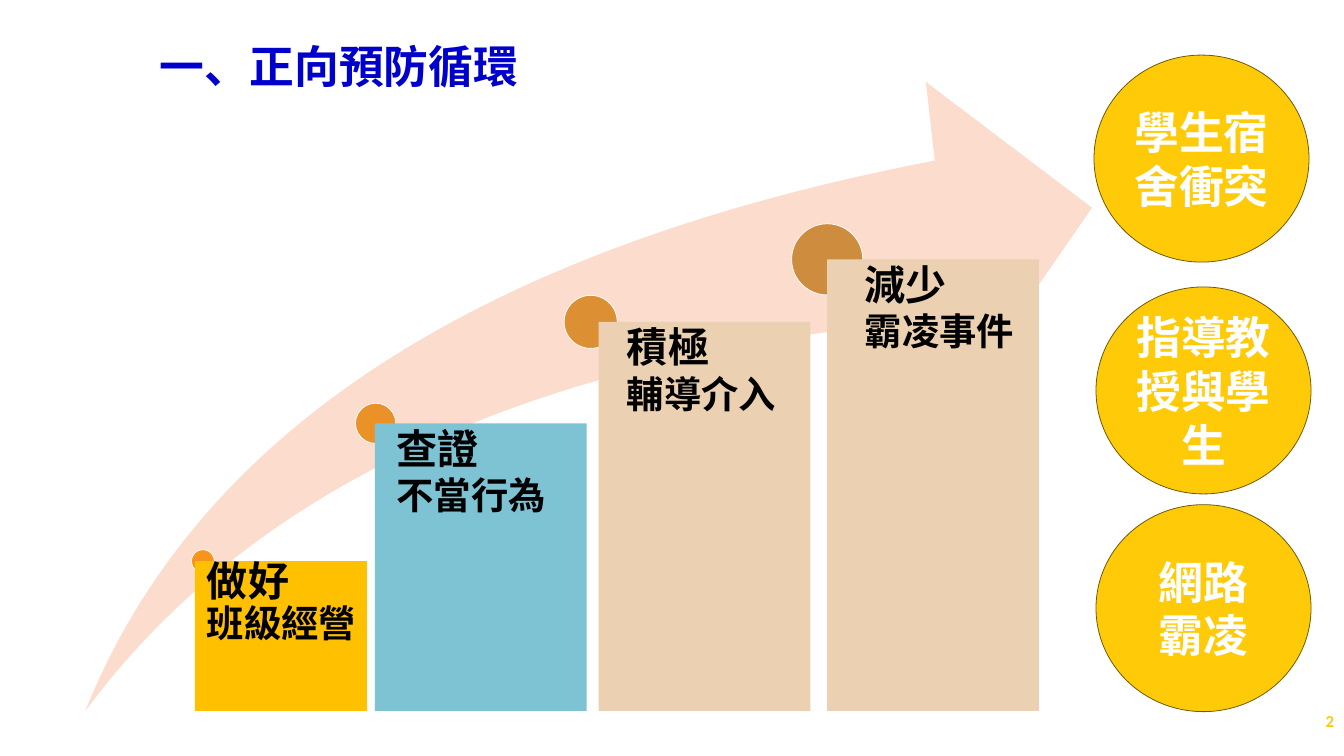
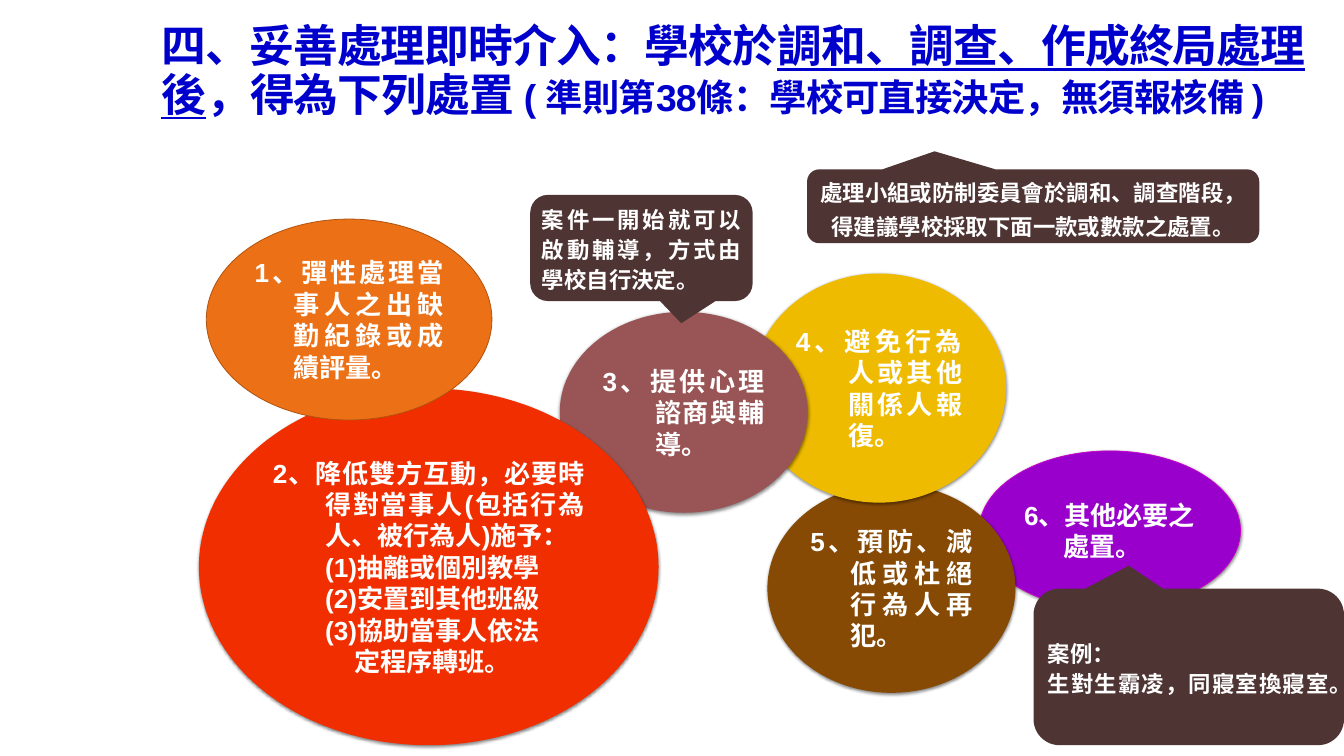
from lxml.etree import SubElement
from pptx import Presentation
from pptx.dml.color import RGBColor
from pptx.enum.shapes import MSO_SHAPE as Shape
from pptx.enum.text import MSO_ANCHOR as Anchor, MSO_AUTO_SIZE as AutoSize, PP_ALIGN as Align
from pptx.oxml.ns import qn
from pptx.util import Inches, Pt

COLUMNS, ROWS = 20, 11.25
TITLE_ONLY = 5
COLORS = {
    "title": "0000CC", "white": "FFFFFF", "black": "000000",
    "gold": "FFCA08", "gold_edge": "705904", "swoosh": "FCDCCD",
    "amber": "FFC000", "teal": "7EC3D4", "sand": "EBD1B2",
    "dot_1": "F8931D", "dot_2": "EA9128", "dot_3": "DC8F33", "dot_4": "CE8D3E",
    "purple": "9900CC", "purple_edge": "CC00CC", "brown": "864A04",
    "yellow": "EFBB00", "rose": "995555", "red": "F02E00",
    "orange": "EC7016", "orange_edge": "AF5310", "callout": "4F3434",
}

CYCLE_TITLE = [("一、正向預防循環", 48, False)]
CYCLE_TITLE_BOX = (2.28, 0.27, 17.17, 1.42)
SWOOSH_BOX = (1.27, 1.22, 14.98, 9.36)
BAR_BOTTOM = 10.58
BARS = [
    {"lines": ("做好", "班級經營"), "left": 2.9, "top": 8.35, "width": 2.56, "inset": 0.18,
     "spacing": 0.9, "fill": "amber", "dot": "dot_1", "dot_center": 3.02, "dot_size": 0.34},
    {"lines": ("查證", "不當行為"), "left": 5.58, "top": 6.3, "width": 3.15, "inset": 0.32,
     "spacing": 1.0, "fill": "teal", "dot": "dot_2", "dot_center": 5.59, "dot_size": 0.6},
    {"lines": ("積極", "輔導介入"), "left": 8.91, "top": 4.79, "width": 3.15, "inset": 0.42,
     "spacing": 1.0, "fill": "sand", "dot": "dot_3", "dot_center": 8.79, "dot_size": 0.79},
    {"lines": ("減少", "霸凌事件"), "left": 12.31, "top": 3.86, "width": 3.15, "inset": 0.56,
     "spacing": 1.0, "fill": "sand", "dot": "dot_4", "dot_center": 12.31, "dot_size": 1.06},
]
CIRCLE_SIZE = (3.2, 3.08)
CIRCLES = [
    (("學生宿舍衝突",), 16.28, 0.82),
    (("指導教授與學生",), 16.31, 4.27),
    (("網路", "霸凌"), 16.31, 7.51),
]
PAGE_NUMBER = "2"
PAGE_NUMBER_BOX = (17.44, 10.43, 2.51, 0.6)

MEASURES_TITLE = [
    ("四、妥善處理即時介入：學校於", 48, False),
    ("調和、調查、作成終局處理後", 48, True),
    ("，得為下列處置 ", 48, False),
    ("( 準則第38條：學校可直接決定，無須報核備 )", 40, False),
]
MEASURES_TITLE_BOX = (2.3, 0, 17.72, 2.16)
MEASURES = [
    {"text": "6、其他必要之處置。", "box": (14.57, 6.71, 3.89, 2.37), "fill": "purple",
     "line": ("purple_edge", 0.75), "hang": 0.59, "align": Align.LEFT},
    {"text": "5、預防、減低或杜絕行為人再犯。", "box": (11.42, 7.2, 3.69, 3.11),
     "fill": "brown", "hang": 0.59},
    {"text": "4、避免行為人或其他關係人報復。", "box": (11.19, 4.07, 3.78, 3.41),
     "fill": "yellow", "hang": 0.78},
    {"text": "3、提供心理諮商與輔導。", "box": (8.33, 4.64, 3.69, 2.99),
     "fill": "rose", "hang": 0.78},
    {"text": "2、降低雙方互動，必要時得對當事人(包括行為人、被行為人)施予：",
     "box": (2.96, 5.78, 6.84, 5.31), "fill": "red", "hang": 0.78,
     "details": [("(1)抽離或個別教學", 0.78), ("(2)安置到其他班級", 0.78),
                 ("(3)協助當事人依法", 0.78), ("定程序轉班。", 1.21)]},
    {"text": "1、彈性處理當事人之出缺勤紀錄或成績評量。", "box": (3.07, 3.26, 4.25, 2.99),
     "fill": "orange", "line": ("orange_edge", 0.85), "hang": 0.58, "shadow": False},
]
CALLOUTS = [
    {"lines": ("處理小組或防制委員會於調和、調查階段，", "得建議學校採取下面一款或數款之處置。"),
     "box": (12.01, 2.52, 6.73, 1.1), "tip": (-0.218, -0.744), "font": "Calibri",
     "align": Align.CENTER, "spacing": 36},
    {"lines": ("案例：", "生對生霸凌，同寢室換寢室。"), "box": (15.38, 8.76, 4.62, 2.33),
     "tip": (-0.193, -0.647), "font": "Arial", "align": Align.JUSTIFY, "spacing": 32},
    {"lines": ("案件一開始就可以啟動輔導，方式由學校自行決定。",), "box": (7.89, 2.9, 3.31, 1.58),
     "tip": (0.179, 0.709), "font": "Arial", "align": Align.JUSTIFY, "spacing": 32},
]


def color(name):
    return RGBColor.from_string(COLORS[name])


def place(box):
    return [Inches(length) for length in box]


def add_run(paragraph, text, size, font, color_name):
    run = paragraph.add_run()
    run.text = text
    run.font.size = Pt(size)
    run.font.name = font
    run.font.bold = True
    run.font.color.rgb = color(color_name)
    return run


def add_paragraph(frame, text, size, font, color_name, align=Align.LEFT, spacing=None):
    paragraph = frame.paragraphs[0]
    if paragraph.runs:
        paragraph = frame.add_paragraph()
    paragraph.alignment = align
    paragraph.line_spacing = spacing
    add_run(paragraph, text, size, font, color_name)
    return paragraph


def set_indent(paragraph, margin, first_line=0):
    properties = paragraph._p.get_or_add_pPr()
    properties.set("marL", str(Inches(margin)))
    properties.set("indent", str(Inches(first_line)))


def add_filled(slide, kind, box, fill, line=None):
    shape = slide.shapes.add_shape(kind, *place(box))
    shape.shadow.inherit = False
    shape.fill.solid()
    shape.fill.fore_color.rgb = color(fill)
    if line:
        shape.line.color.rgb = color(line[0])
        shape.line.width = Pt(line[1])
    else:
        shape.line.fill.background()
    shape.text_frame.word_wrap = True
    shape.text_frame.vertical_anchor = Anchor.MIDDLE
    return shape


def add_soft_shadow(shape):
    effects = shape._element.spPr.find(qn("a:effectLst"))
    shadow = SubElement(effects, qn("a:outerShdw"), blurRad=str(Pt(3.5)), dist=str(Pt(1.1)),
                        dir="5400000", rotWithShape="0")
    tint = SubElement(shadow, qn("a:srgbClr"), val=COLORS["black"])
    SubElement(tint, qn("a:alpha"), val="45000")


def add_titled_slide(presentation, parts, box):
    slide = presentation.slides.add_slide(presentation.slide_layouts[TITLE_ONLY])
    title = slide.shapes.title
    title.left, title.top, title.width, title.height = place(box)
    frame = title.text_frame
    frame.word_wrap = True
    frame.auto_size = AutoSize.NONE
    frame.vertical_anchor = Anchor.MIDDLE
    paragraph = frame.paragraphs[0]
    paragraph.alignment = Align.LEFT
    for text, size, underlined in parts:
        run = add_run(paragraph, text, size, "Arial", "title")
        run.font.underline = underlined
    return slide


def add_bar(slide, bar):
    size = bar["dot_size"]
    dot_box = (bar["dot_center"] - size / 2, bar["top"] - size / 2, size, size)
    add_filled(slide, Shape.OVAL, dot_box, bar["dot"], ("white", 0.85))
    box = (bar["left"], bar["top"], bar["width"], BAR_BOTTOM - bar["top"])
    frame = add_filled(slide, Shape.RECTANGLE, box, bar["fill"]).text_frame
    frame.vertical_anchor = Anchor.TOP
    frame.margin_left = Inches(bar["inset"])
    frame.margin_top = frame.margin_right = frame.margin_bottom = 0
    for text, text_size in zip(bar["lines"], (44, 40)):
        add_paragraph(frame, text, text_size, "Calibri", "black", spacing=bar["spacing"])


def build_cycle(presentation):
    slide = add_titled_slide(presentation, CYCLE_TITLE, CYCLE_TITLE_BOX)
    swoosh = add_filled(slide, Shape.SWOOSH_ARROW, SWOOSH_BOX, "swoosh")
    swoosh.adjustments[0] = swoosh.adjustments[1] = 0.25
    for bar in BARS:
        add_bar(slide, bar)
    for lines, left, top in CIRCLES:
        circle = add_filled(slide, Shape.OVAL, (left, top, *CIRCLE_SIZE), "gold", ("gold_edge", 0.85))
        for text in lines:
            add_paragraph(circle.text_frame, text, 48, "Calibri", "white", Align.CENTER)
    frame = slide.shapes.add_textbox(*place(PAGE_NUMBER_BOX)).text_frame
    frame.word_wrap = True
    frame.vertical_anchor = Anchor.MIDDLE
    add_paragraph(frame, PAGE_NUMBER, 18, "Calibri", "gold", Align.RIGHT)


def add_measure(slide, measure):
    ellipse = add_filled(slide, Shape.OVAL, measure["box"], measure["fill"], measure.get("line"))
    if measure.get("shadow", True):
        add_soft_shadow(ellipse)
    align = measure.get("align", Align.JUSTIFY)
    hang = measure["hang"]
    heading = add_paragraph(ellipse.text_frame, measure["text"], 28, "Arial", "white", align)
    set_indent(heading, hang, -hang)
    for text, margin in measure.get("details", []):
        set_indent(add_paragraph(ellipse.text_frame, text, 28, "Arial", "white", align), margin)


def add_callout(slide, callout):
    shape = add_filled(slide, Shape.ROUNDED_RECTANGULAR_CALLOUT, callout["box"], "callout")
    for index, offset in enumerate(callout["tip"]):
        shape.adjustments[index] = offset
    for text in callout["lines"]:
        add_paragraph(shape.text_frame, text, 24, callout["font"], "white",
                      callout["align"], Pt(callout["spacing"]))


def build_measures(presentation):
    slide = add_titled_slide(presentation, MEASURES_TITLE, MEASURES_TITLE_BOX)
    paragraph = slide.shapes.title.text_frame.paragraphs[0]
    paragraph.line_spacing = 0.9
    paragraph.space_before = Pt(36)
    paragraph.space_after = Pt(12)
    for run in paragraph.runs:
        run.font._element.set("spc", "-90")
    for measure in MEASURES:
        add_measure(slide, measure)
    for callout in CALLOUTS:
        add_callout(slide, callout)


def main():
    presentation = Presentation()
    presentation.slide_width = Inches(COLUMNS)
    presentation.slide_height = Inches(ROWS)
    build_cycle(presentation)
    build_measures(presentation)
    presentation.save("out.pptx")


if __name__ == "__main__":
    main()
